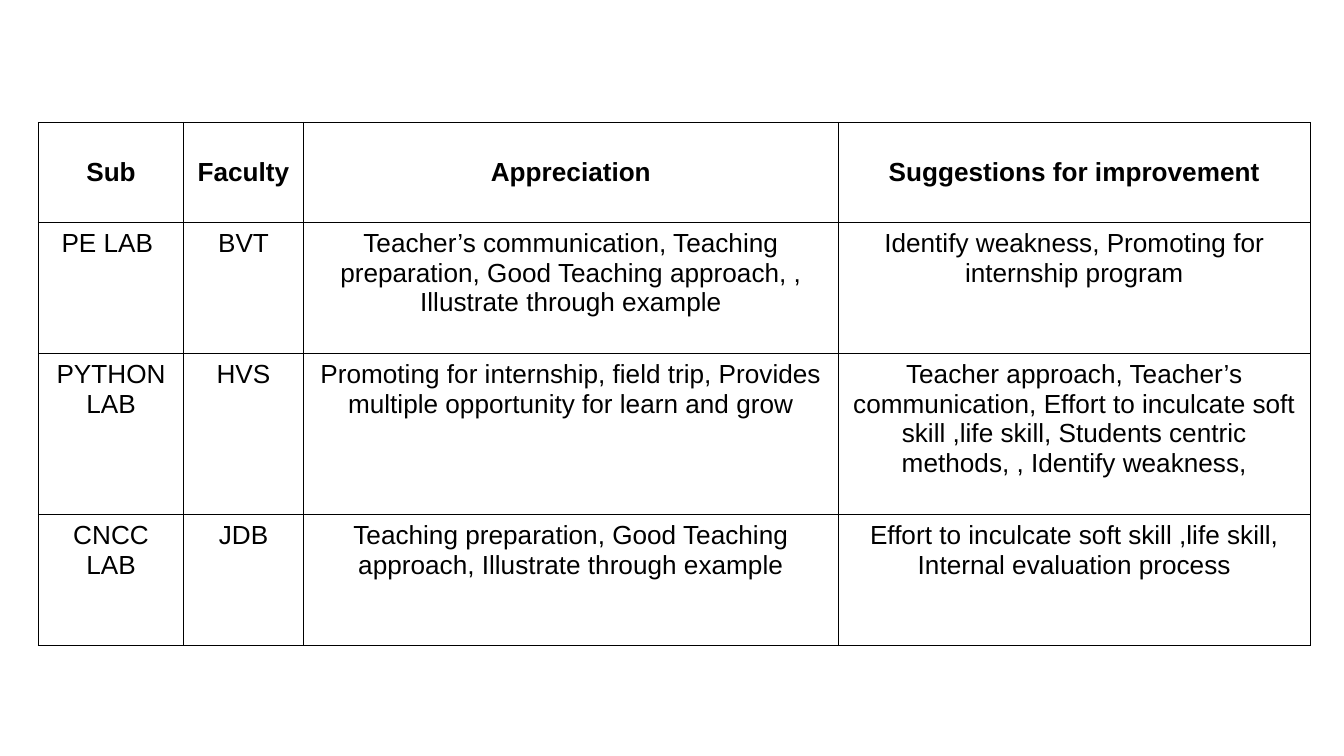
import lxml.etree
import pptx
import pptx.dml.color
import pptx.enum.text
import pptx.oxml.ns
import pptx.util

Pt = pptx.util.Pt
ALIGN = pptx.enum.text.PP_ALIGN
ANCHOR = pptx.enum.text.MSO_ANCHOR

COLUMN_WIDTHS = [77.8, 64.2, 286.6, 252.8]
ROW_HEIGHTS = [53.6, 70.2, 86.2, 70.2]
FEEDBACK = [
    ["Sub", "Faculty", "Appreciation", "Suggestions for improvement"],
    [
        "PE LAB ",
        "BVT",
        "Teacher’s communication, Teaching preparation, Good Teaching approach, , "
        "Illustrate through example",
        "Identify weakness, Promoting for internship program",
    ],
    [
        "PYTHON LAB",
        "HVS",
        "Promoting for internship, field trip, Provides multiple opportunity for learn and grow",
        "Teacher approach, Teacher’s communication, Effort to inculcate soft skill ,life skill, "
        "Students centric methods, , Identify weakness,",
    ],
    [
        "CNCC LAB",
        "JDB",
        "Teaching preparation, Good Teaching approach, Illustrate through example",
        "Effort to inculcate soft skill ,life skill, Internal evaluation process",
    ],
]


def color(value):
    return pptx.dml.color.RGBColor.from_string(value)


def apply_format(target, values):
    for name, value in values.items():
        setattr(target, name, value)


def add_borders(cell, line_color, width):
    properties = cell._tc.get_or_add_tcPr()
    for side in ("a:lnL", "a:lnR", "a:lnT", "a:lnB"):
        line = lxml.etree.SubElement(properties, pptx.oxml.ns.qn(side), w=str(Pt(width)))
        fill = lxml.etree.SubElement(line, pptx.oxml.ns.qn("a:solidFill"))
        lxml.etree.SubElement(fill, pptx.oxml.ns.qn("a:srgbClr"), val=line_color)


def fill_cell(cell, text, is_header):
    add_borders(cell, "000000", 0.75)
    cell.fill.solid()
    cell.fill.fore_color.rgb = color("FFFFFF")
    cell.vertical_anchor = ANCHOR.MIDDLE if is_header else ANCHOR.TOP
    paragraph = cell.text_frame.paragraphs[0]
    paragraph.alignment = ALIGN.CENTER
    run = paragraph.add_run()
    run.text = text
    apply_format(run.font, {"name": "Arial", "size": Pt(14), "bold": is_header})
    run.font.color.rgb = color("000000")


def add_feedback_table(slide, left, top, width, height):
    shape = slide.shapes.add_table(
        len(FEEDBACK), len(COLUMN_WIDTHS), Pt(left), Pt(top), Pt(width), Pt(height)
    )
    table = shape.table
    apply_format(table, {"first_row": False, "horz_banding": False})
    for column, share in zip(table.columns, COLUMN_WIDTHS):
        column.width = Pt(width * share / sum(COLUMN_WIDTHS))
    for row, share in zip(table.rows, ROW_HEIGHTS):
        row.height = Pt(height * share / sum(ROW_HEIGHTS))
    for row_index, texts in enumerate(FEEDBACK):
        for column_index, text in enumerate(texts):
            fill_cell(table.cell(row_index, column_index), text, row_index == 0)


def main():
    presentation = pptx.Presentation()
    apply_format(presentation, {"slide_width": Pt(720), "slide_height": Pt(405)})
    slide = presentation.slides.add_slide(presentation.slide_layouts[6])
    add_feedback_table(slide, 20.6, 65.6, sum(COLUMN_WIDTHS), sum(ROW_HEIGHTS))
    presentation.save("out.pptx")


if __name__ == "__main__":
    main()
